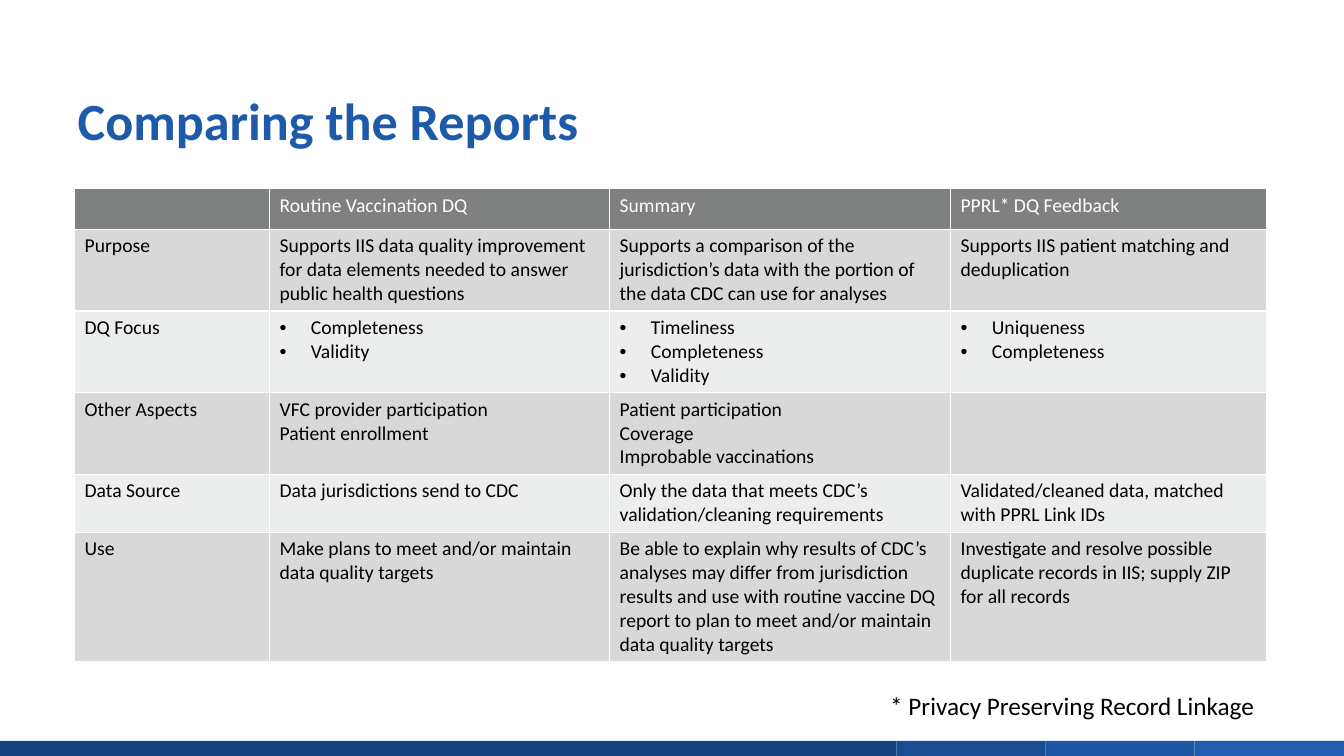
from dataclasses import dataclass

from lxml.etree import SubElement
from pptx import Presentation
from pptx.dml.color import RGBColor
from pptx.enum.shapes import MSO_SHAPE
from pptx.enum.text import MSO_ANCHOR, PP_ALIGN
from pptx.oxml.ns import qn
from pptx.slide import Slide
from pptx.table import _Cell
from pptx.text.text import _Paragraph
from pptx.util import Inches, Pt

WIDTH, HEIGHT = Inches(13.33), Inches(7.5)
FONT = "Calibri"
COLORS = {
    "title": "1E5AAA",
    "text": "000000",
    "header_text": "FFFFFF",
    "header": "7F8080",
    "dark_row": "D8D8D8",
    "light_row": "ECEDED",
}
COLUMN_SHARES = (14.51, 25.3, 25.37, 23.51)


@dataclass(frozen=True)
class Band:
    left: float
    width: float
    color: str


@dataclass(frozen=True)
class ReportRow:
    height: float
    cells: tuple[str, ...]
    fill: str
    text_color: str = "text"
    bulleted: bool = False


FOOTER_BANDS = [Band(0, 66.7, "164380")] + [
    Band(66.7 + 11.1 * step, 11.1, color)
    for step, color in enumerate(("194D93", "1C56A4", "1E5DB2"))
]

REPORT_ROWS = (
    ReportRow(5.4, ("", "Routine Vaccination DQ", "Summary", "PPRL* DQ Feedback"),
              "header", "header_text"),
    ReportRow(10.8, (
        "Purpose",
        "Supports IIS data quality improvement for data elements needed to answer "
        "public health questions",
        "Supports a comparison of the jurisdiction’s data with the portion of the "
        "data CDC can use for analyses",
        "Supports IIS patient matching and deduplication",
    ), "dark_row"),
    ReportRow(10.8, (
        "DQ Focus",
        "Completeness\nValidity",
        "Timeliness\nCompleteness\nValidity",
        "Uniqueness\nCompleteness",
    ), "light_row", bulleted=True),
    ReportRow(10.8, (
        "Other Aspects",
        "VFC provider participation\nPatient enrollment",
        "Patient participation\nCoverage\nImprobable vaccinations",
        "",
    ), "dark_row"),
    ReportRow(7.6, (
        "Data Source",
        "Data jurisdictions send to CDC",
        "Only the data that meets CDC’s validation/cleaning requirements",
        "Validated/cleaned data, matched with PPRL Link IDs",
    ), "light_row"),
    ReportRow(17.1, (
        "Use",
        "Make plans to meet and/or maintain data quality targets",
        "Be able to explain why results of CDC’s analyses may differ from "
        "jurisdiction results and use with routine vaccine DQ report to plan to "
        "meet and/or maintain data quality targets",
        "Investigate and resolve possible duplicate records in IIS; supply ZIP "
        "for all records",
    ), "dark_row"),
)


def across(percent: float) -> int:
    return round(WIDTH * percent / 100)


def down(percent: float) -> int:
    return round(HEIGHT * percent / 100)


def set_font(paragraph: _Paragraph, size: float, color: str, bold: bool = False) -> None:
    font = paragraph.font
    font.name, font.size, font.bold = FONT, Pt(size), bold
    font.color.rgb = RGBColor.from_string(COLORS[color])


def add_bullet(paragraph: _Paragraph) -> None:
    properties = paragraph._p.get_or_add_pPr()
    properties.set("marL", str(Inches(0.31)))
    properties.set("indent", str(-Inches(0.31)))
    SubElement(properties, qn("a:buFont"), typeface="Arial")
    SubElement(properties, qn("a:buChar"), char="•")


def draw_band(slide: Slide, band: Band) -> None:
    stripe = slide.shapes.add_shape(
        MSO_SHAPE.RECTANGLE, across(band.left), down(98), across(band.width), down(2))
    stripe.shadow.inherit = False
    stripe.fill.solid()
    stripe.fill.fore_color.rgb = RGBColor.from_string(band.color)
    stripe.line.fill.background()


def draw_title(slide: Slide) -> None:
    title = slide.shapes.title
    title.left, title.top = across(5.03), down(4)
    title.width, title.height = across(90), down(16.67)
    title.text_frame.text = "Comparing the Reports"
    title.text_frame.vertical_anchor = MSO_ANCHOR.BOTTOM
    heading = title.text_frame.paragraphs[0]
    heading.alignment = PP_ALIGN.LEFT
    heading.line_spacing = Pt(40)
    set_font(heading, 37.3, "title", bold=True)


def fill_cell(cell: _Cell, text: str, row: ReportRow, bulleted: bool) -> None:
    cell.fill.solid()
    cell.fill.fore_color.rgb = RGBColor.from_string(COLORS[row.fill])
    cell.text_frame.text = text
    for paragraph in cell.text_frame.paragraphs:
        if bulleted:
            add_bullet(paragraph)
        set_font(paragraph, 14, row.text_color)


def draw_comparison(slide: Slide) -> None:
    comparison = slide.shapes.add_table(
        len(REPORT_ROWS), len(COLUMN_SHARES), across(5.55), down(24.93),
        across(sum(COLUMN_SHARES)), down(sum(row.height for row in REPORT_ROWS))).table
    for column, share in zip(comparison.columns, COLUMN_SHARES):
        column.width = across(share)
    for table_row, row in zip(comparison.rows, REPORT_ROWS):
        table_row.height = down(row.height)
        for position, (cell, text) in enumerate(zip(table_row.cells, row.cells)):
            fill_cell(cell, text, row, row.bulleted and position > 0)


def draw_footnote(slide: Slide) -> None:
    footnote = slide.shapes.add_textbox(
        across(65.5), down(90.67), across(28.9), down(5.33)).text_frame
    footnote.word_wrap = False
    footnote.text = "* Privacy Preserving Record Linkage"
    set_font(footnote.paragraphs[0], 18, "text")


def main() -> None:
    presentation = Presentation()
    presentation.slide_width, presentation.slide_height = WIDTH, HEIGHT
    slide = presentation.slides.add_slide(presentation.slide_layouts[5])
    for band in FOOTER_BANDS:
        draw_band(slide, band)
    draw_title(slide)
    draw_comparison(slide)
    draw_footnote(slide)
    presentation.save("out.pptx")


if __name__ == "__main__":
    main()
